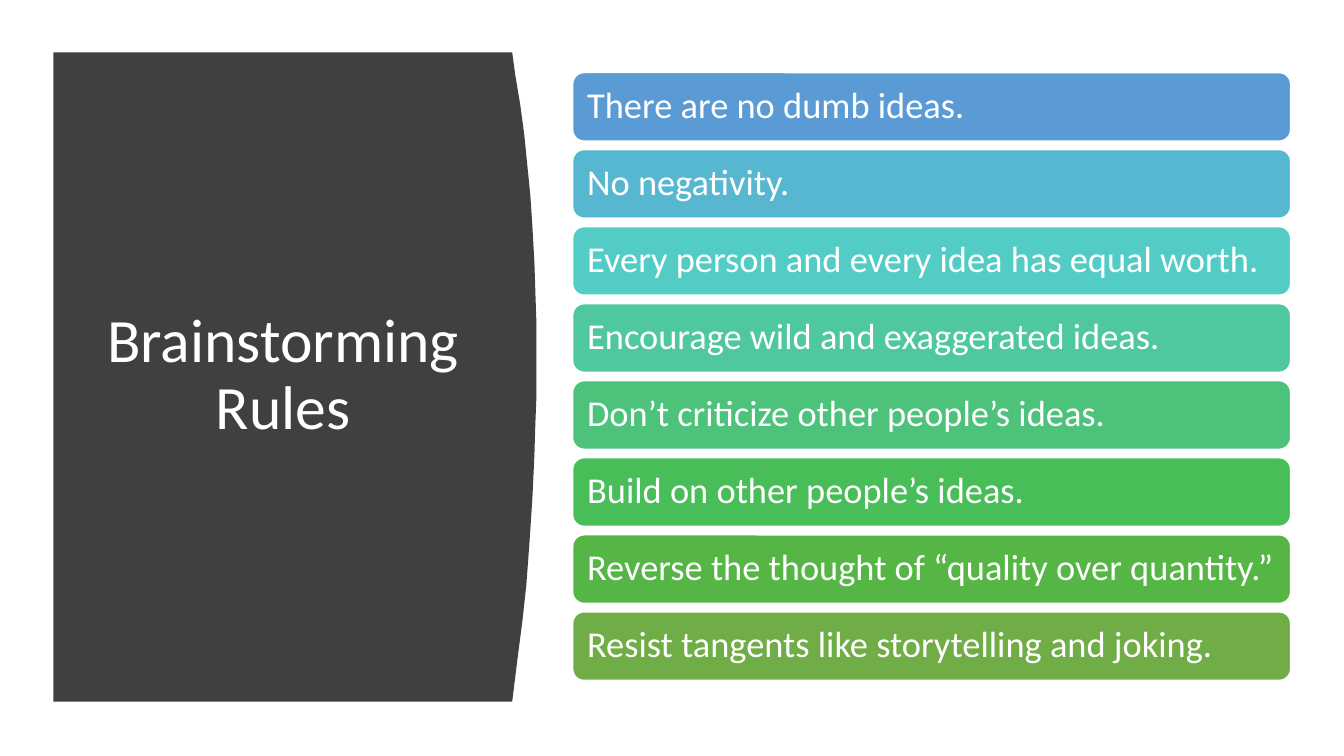
from dataclasses import dataclass

import pptx
import pptx.dml.color
import pptx.enum.shapes
import pptx.enum.text
import pptx.shapes.autoshape
import pptx.slide
import pptx.text.text
import pptx.util
from pptx.util import Inches


@dataclass(frozen=True)
class Theme:
    font: str = "Calibri"
    panel: str = "404040"
    white: str = "FFFFFF"
    title_size: int = 44
    rule_size: int = 26
    outline: int = 1
    line_spacing: float = 0.9


@dataclass(frozen=True)
class Rule:
    text: str
    color: str


THEME = Theme()

RULES = [
    Rule("There are no dumb ideas.", "5B9BD5"),
    Rule("No negativity.", "57B7D1"),
    Rule("Every person and every idea has equal worth.", "53CCC5"),
    Rule("Encourage wild and exaggerated ideas.", "4FC7A0"),
    Rule("Don’t criticize other people’s ideas.", "4CC27B"),
    Rule("Build on other people’s ideas.", "48BD58"),
    Rule("Reverse the thought of “quality over quantity.”", "55B646"),
    Rule("Resist tangents like storytelling and joking.", "70AD47"),
]

PANEL_LEFT, PANEL_TOP, PANEL_BOTTOM = 0.53, 0.52, 6.96
PANEL_EDGE = [
    (5.08, PANEL_TOP), (5.11, 0.74), (5.16, 1.04), (5.2, 1.34), (5.23, 1.64),
    (5.26, 1.94), (5.28, 2.24), (5.3, 2.6), (5.31, 2.9), (5.32, 3.2),
    (5.32, 3.94), (5.31, 4.2), (5.3, 4.52), (5.28, 4.95), (5.25, 5.4),
    (5.22, 5.81), (5.18, 6.17), (5.14, 6.48), (5.11, 6.72), (5.08, PANEL_BOTTOM),
]

BAR_LEFT, BAR_WIDTH, BAR_HEIGHT = 5.68, 7.12, 0.68
FIRST_BAR_TOP, LAST_BAR_TOP = 0.72, 6.07
BAR_PITCH = (LAST_BAR_TOP - FIRST_BAR_TOP) / (len(RULES) - 1)
BAR_INSET = 0.11


def rgb(color: str) -> pptx.dml.color.RGBColor:
    return pptx.dml.color.RGBColor.from_string(color)


def fill_shape(s: pptx.shapes.autoshape.Shape, color: str) -> None:
    s.shadow.inherit = False
    s.fill.solid()
    s.fill.fore_color.rgb = rgb(color)


def write_text(tf: pptx.text.text.TextFrame, text: str, size: int,
               align: pptx.enum.text.PP_ALIGN) -> None:
    tf.text = text
    tf.word_wrap = True
    tf.vertical_anchor = pptx.enum.text.MSO_ANCHOR.MIDDLE
    p = tf.paragraphs[0]
    p.alignment = align
    p.line_spacing = THEME.line_spacing
    r = p.runs[0]
    r.font.name = THEME.font
    r.font.size = pptx.util.Pt(size)
    r.font.color.rgb = rgb(THEME.white)


def draw_panel(slide: pptx.slide.Slide) -> None:
    outline = slide.shapes.build_freeform(
        Inches(PANEL_LEFT), Inches(PANEL_TOP))
    edge = [*PANEL_EDGE, (PANEL_LEFT, PANEL_BOTTOM)]
    outline.add_line_segments([(Inches(x), Inches(y)) for x, y in edge], close=True)
    s = outline.convert_to_shape()
    fill_shape(s, THEME.panel)
    s.line.fill.background()


def draw_title(slide: pptx.slide.Slide) -> None:
    s = slide.shapes.add_textbox(Inches(0.94), Inches(1.11), Inches(3.74), Inches(5.24))
    write_text(s.text_frame, "Brainstorming Rules", THEME.title_size,
               pptx.enum.text.PP_ALIGN.CENTER)


def draw_rule(slide: pptx.slide.Slide, rule: Rule, top: float) -> None:
    s = slide.shapes.add_shape(
        pptx.enum.shapes.MSO_SHAPE.ROUNDED_RECTANGLE,
        Inches(BAR_LEFT), Inches(top), Inches(BAR_WIDTH), Inches(BAR_HEIGHT))
    fill_shape(s, rule.color)
    s.line.color.rgb = rgb(THEME.white)
    s.line.width = pptx.util.Pt(THEME.outline)
    tf = s.text_frame
    tf.margin_left = tf.margin_right = Inches(BAR_INSET)
    tf.margin_top = tf.margin_bottom = Inches(BAR_INSET)
    write_text(tf, rule.text, THEME.rule_size, pptx.enum.text.PP_ALIGN.LEFT)


def main() -> None:
    prs = pptx.Presentation()
    prs.slide_width, prs.slide_height = Inches(13.33), Inches(7.5)
    slide = prs.slides.add_slide(prs.slide_layouts[6])
    draw_panel(slide)
    draw_title(slide)
    for i, rule in enumerate(RULES):
        draw_rule(slide, rule, FIRST_BAR_TOP + i * BAR_PITCH)
    prs.save("out.pptx")


if __name__ == "__main__":
    main()
